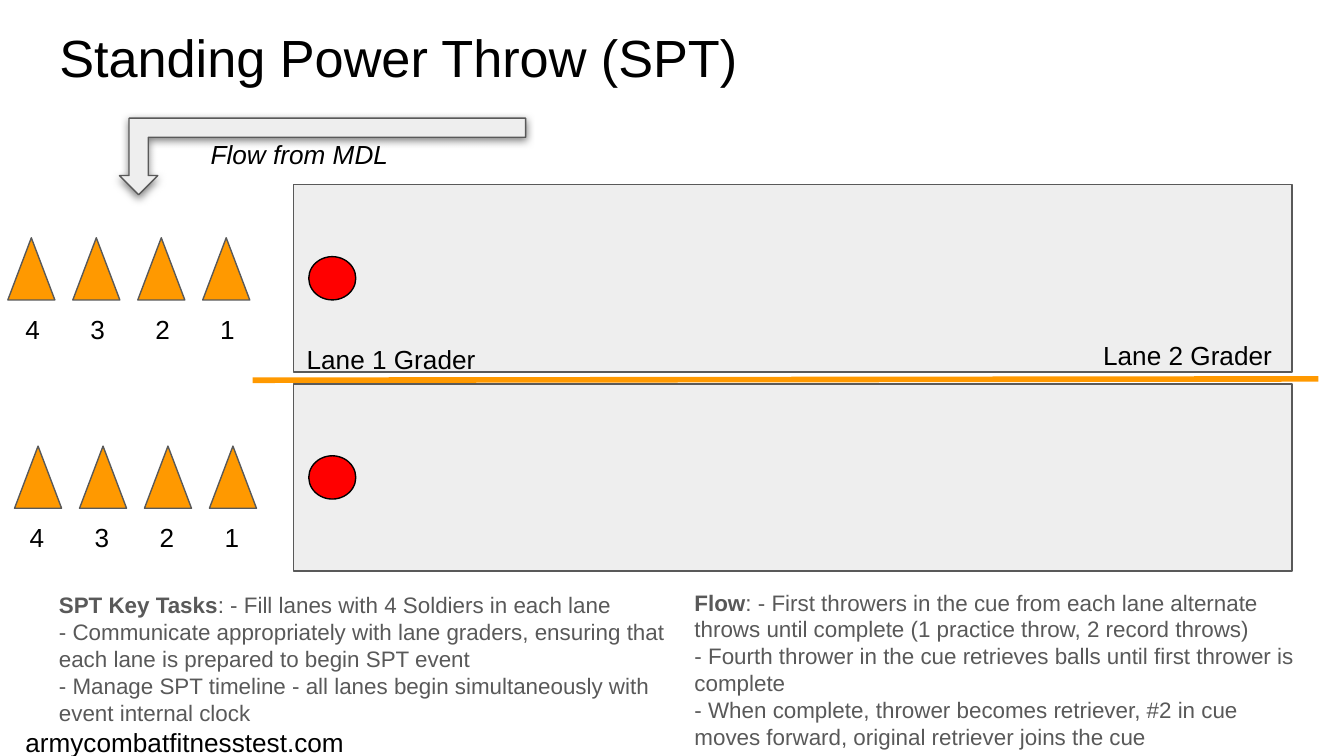
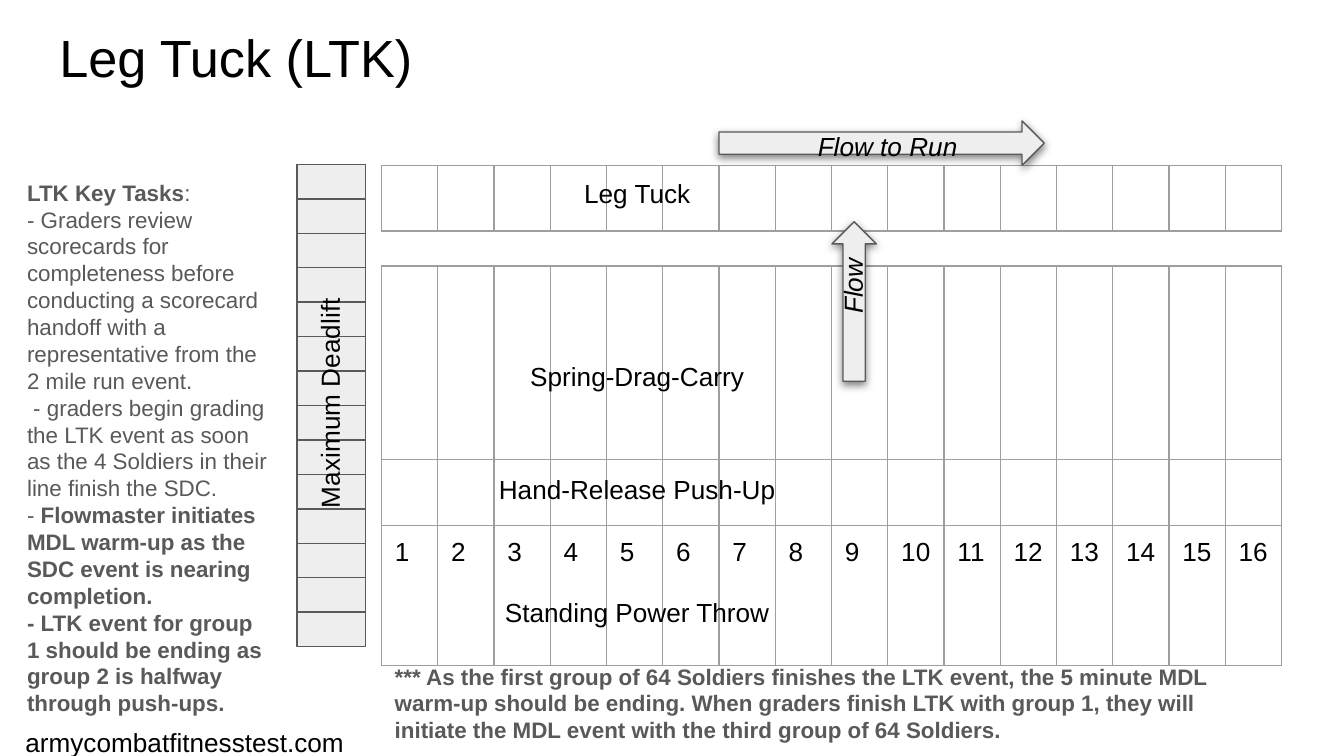
from lxml.etree import SubElement
from pptx import Presentation
from pptx.dml.color import RGBColor
from pptx.enum.shapes import MSO_CONNECTOR as Connector, MSO_SHAPE as Shape
from pptx.enum.text import MSO_ANCHOR as Anchor, PP_ALIGN as Align
from pptx.oxml import parse_xml
from pptx.oxml.ns import nsdecls, qn
from pptx.util import Pt

BLACK = RGBColor(0x00, 0x00, 0x00)
GRAY = RGBColor(0x59, 0x59, 0x59)
LIGHT = RGBColor(0xEE, 0xEE, 0xEE)
GRID = RGBColor(0x9E, 0x9E, 0x9E)
ORANGE = RGBColor(0xFF, 0x99, 0x00)
RED = RGBColor(0xFF, 0x00, 0x00)

INSET = Pt(7.2)
FRAME = {
    "word_wrap": True, "vertical_anchor": Anchor.TOP,
    "margin_left": INSET, "margin_right": INSET,
    "margin_top": INSET, "margin_bottom": INSET,
}
CELL = {
    "margin_left": INSET, "margin_right": INSET,
    "margin_top": Pt(6.8), "margin_bottom": Pt(6.8),
}
TITLE = {"name": "Arial", "size": Pt(28)}
LABEL = {"name": "Arial", "size": Pt(14)}
FLOW = {**LABEL, "italic": True}
BODY = {"name": "Arial", "size": Pt(12)}


def apply(target, values):
    """Set every named attribute on the target."""
    for name, value in values.items():
        setattr(target, name, value)


class Deck:
    """Hold the shared style and the slide being built."""

    def __init__(self):
        self.deck = Presentation()
        apply(self.deck, {"slide_width": Pt(720), "slide_height": Pt(405)})
        self.page = None

    def new_page(self, title):
        """Start a slide with the shared web address and its title."""
        self.page = self.deck.slides.add_slide(self.deck.slide_layouts[6])
        self.text((6.5, 381.8, 186.5, 20.9), "armycombatfitnesstest.com", LABEL)
        self.text((24.7, 6.5, 671, 45.4), title, TITLE)

    def add_span(self, para, text, font, color=BLACK):
        """Append one formatted run to a paragraph."""
        span = para.add_run()
        span.text = text
        apply(span.font, font)
        span.font.color.rgb = color

    def text(self, at, text, font, align=Align.LEFT, rotation=0):
        """Add a one-paragraph label."""
        box = self.page.shapes.add_textbox(*map(Pt, at))
        box.rotation = rotation
        apply(box.text_frame, FRAME)
        para = box.text_frame.paragraphs[0]
        para.alignment = align
        self.add_span(para, text, font)

    def body(self, at, paragraphs):
        """Add gray notes, each paragraph a list of (text, bold) pairs."""
        box = self.page.shapes.add_textbox(*map(Pt, at))
        frame = box.text_frame
        apply(frame, FRAME)
        for index, spans in enumerate(paragraphs):
            para = frame.add_paragraph() if index else frame.paragraphs[0]
            para.line_spacing = 1.0
            for text, bold in spans:
                self.add_span(para, text, {**BODY, "bold": bold}, GRAY)

    def shape(self, kind, at, fill=LIGHT, line=GRAY):
        """Add a filled, outlined preset shape."""
        box = self.page.shapes.add_shape(kind, *map(Pt, at))
        box.shadow.inherit = False
        box.fill.solid()
        box.fill.fore_color.rgb = fill
        box.line.color.rgb = line
        box.line.width = Pt(0.75)
        return box

    def arrow(self, kind, at, rotation=0):
        """Add a block arrow with a soft shadow below it."""
        arrow = self.shape(kind, at)
        arrow.rotation = rotation
        effects = arrow.element.spPr.find(qn("a:effectLst"))
        effects.append(parse_xml(
            f'<a:outerShdw {nsdecls("a")} blurRad="{Pt(4.5)}" dist="{Pt(1.5)}" '
            'dir="5400000" algn="bl" rotWithShape="0"><a:srgbClr val="000000">'
            '<a:alpha val="50000"/></a:srgbClr></a:outerShdw>'))

    def line(self, start, end, color, width):
        """Add a straight line."""
        line = self.page.shapes.add_connector(
            Connector.STRAIGHT, *map(Pt, start + end))
        line.line.color.rgb = color
        line.line.width = Pt(width)
        SubElement(line.element.spPr, qn("a:effectLst"))

    def grid(self, left, top, column_width, row_heights, columns, numbered=False):
        """Add an unfilled table, optionally numbering its last row."""
        table = self.page.shapes.add_table(
            len(row_heights), columns, Pt(left), Pt(top),
            Pt(column_width * columns), Pt(sum(row_heights))).table
        apply(table, {"first_row": False, "horz_banding": False})
        for column in table.columns:
            column.width = Pt(column_width)
        for row, height in zip(table.rows, row_heights):
            row.height = Pt(height)
        for cell in table.iter_cells():
            apply(cell, CELL)
            self.borders(cell)
            cell.fill.background()
        if numbered:
            for number, cell in enumerate(table.rows[len(row_heights) - 1].cells, 1):
                self.add_span(cell.text_frame.paragraphs[0], str(number), LABEL)

    def borders(self, cell):
        """Outline all four sides of a cell."""
        properties = cell._tc.get_or_add_tcPr()
        for side in ("lnL", "lnR", "lnT", "lnB"):
            properties.append(parse_xml(
                f'<a:{side} {nsdecls("a")} w="{Pt(0.75)}"><a:solidFill>'
                f'<a:srgbClr val="{GRID}"/></a:solidFill></a:{side}>'))

    def cones(self, cone_left, label_left, top, pitch=34.8):
        """Add a queue of four cones numbered from right to left."""
        for index in range(4):
            step = index * pitch
            self.shape(Shape.ISOSCELES_TRIANGLE,
                       (cone_left + step, top, 25.2, 33.3), ORANGE)
            self.text((label_left + step, top + 33.3, 20.2, 27.4),
                      str(4 - index), LABEL)


def power_throw(deck):
    """Build the throwing lanes slide."""
    deck.new_page("Standing Power Throw (SPT)")
    deck.body((24.5, 309.6, 340.6, 82), [
        [("SPT Key Tasks", True),
         (": - Fill lanes with 4 Soldiers in each lane", False)],
        [("- Communicate appropriately with lane graders, ensuring that each "
          "lane is prepared to begin SPT event", False)],
        [("- Manage SPT timeline - all lanes begin simultaneously with event "
          "internal clock", False)],
    ])
    for lane_top in (99, 205.7):
        deck.shape(Shape.RECTANGLE, (157.2, lane_top, 535, 100.3))
        deck.shape(Shape.OVAL, (165.4, lane_top + 38.5, 25.2, 23.2), RED, BLACK)
    deck.arrow(Shape.BENT_UP_ARROW, (64, 63.3, 217.6, 41), 180)
    deck.text((58.2, 67, 204.5, 33.1), "Flow from MDL", FLOW, Align.CENTER)
    deck.cones(4.2, 6.5, 127.4)
    deck.cones(7.8, 8.8, 239)
    deck.text((157.2, 176.7, 108, 35.3), "Lane 1 Grader", LABEL)
    deck.line((135.4, 203.7), (706.3, 203), ORANGE, 3)
    deck.text((583.9, 174.5, 108, 35.3), "Lane 2 Grader", LABEL)
    deck.body((365, 308.2, 340.6, 93.6), [
        [("Flow", True),
         (": - First throwers in the cue from each lane alternate throws until "
          "complete (1 practice throw, 2 record throws)", False)],
        [("- Fourth thrower in the cue retrieves balls until first thrower is "
          "complete", False)],
        [("- When complete, thrower becomes retriever, #2 in cue moves forward, "
          "original retriever joins the cue", False)],
    ])


def leg_tuck(deck):
    """Build the event layout slide."""
    deck.new_page("Leg Tuck (LTK)")
    deck.grid(204.4, 142.5, 30.15, (103.8, 34.5, 75), 16, numbered=True)
    deck.grid(204.4, 88.6, 30.15, (34.5,), 16)
    deck.shape(Shape.RECTANGLE, (159.2, 88.3, 36.6, 257.2))
    deck.arrow(Shape.RIGHT_ARROW, (385.2, 64.8, 174.2, 23.8))
    deck.arrow(Shape.UP_ARROW, (445.7, 118.8, 23.8, 85.5))
    for station in range(14):
        deck.shape(Shape.RECTANGLE, (159.2, 88.1 + station * 18.45, 36.6, 18.45))
    for top, event in ((312.5, "Standing Power Throw"),
                       (246.2, "Hand-Release Push-Up"),
                       (185.8, "Spring-Drag-Carry"),
                       (87.8, "Leg Tuck")):
        deck.text((240.2, top, 202.3, 33.1), event, LABEL, Align.CENTER)
    deck.text((76.3, 199.4, 202.3, 33.1), "Maximum Deadlift", LABEL,
              Align.CENTER, 270)
    deck.text((432, 136.8, 51.1, 33.1), "Flow", FLOW, Align.CENTER, 270)
    deck.text((385.2, 62.6, 180.7, 33.1), "Flow to Run", FLOW, Align.CENTER)
    deck.body((7.4, 88.6, 143.3, 292.3), [
        [("LTK Key Tasks", True), (":", False)],
        [("- Graders review scorecards for completeness before conducting a "
          "scorecard handoff with a representative from the 2 mile run event.",
          False)],
        [(" - graders begin grading the LTK event as soon as the 4 Soldiers in "
          "their line finish the SDC.", False)],
        [("- ", False),
         ("Flowmaster initiates MDL warm-up as the SDC event is nearing "
          "completion.", True)],
        [("- LTK event for group 1 should be ending as group 2 is halfway "
          "through push-ups.", True)],
    ])
    deck.body((204.4, 347.8, 482.4, 51.1), [
        [("*** As the first group of 64 Soldiers finishes the LTK event, the 5 "
          "minute MDL warm-up should be ending. When graders finish LTK with "
          "group 1, they will initiate the MDL event with the third group of 64 "
          "Soldiers.", True)],
    ])


def main():
    """Build both slides and save them."""
    deck = Deck()
    power_throw(deck)
    leg_tuck(deck)
    deck.deck.save("out.pptx")


if __name__ == "__main__":
    main()
